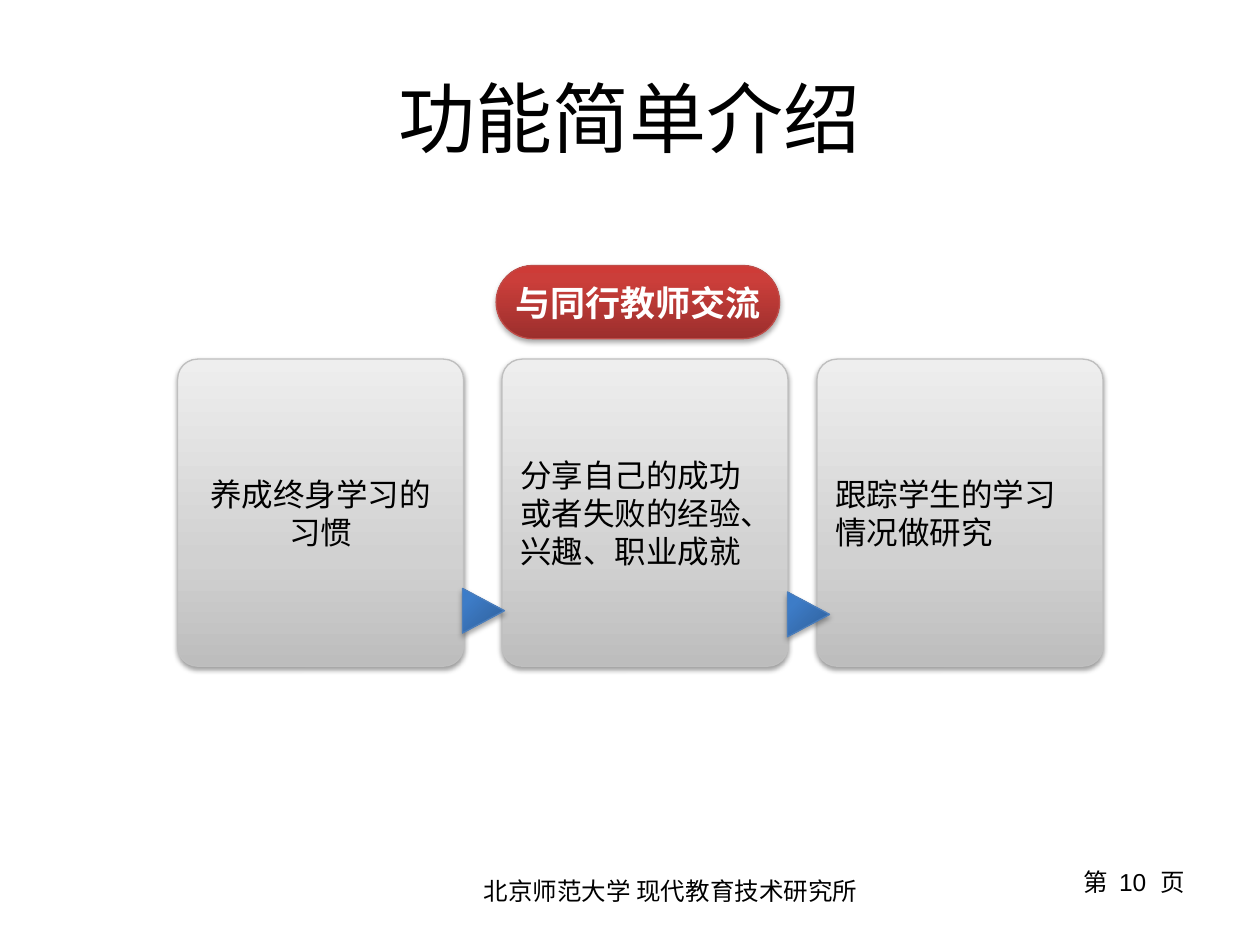
from copy import deepcopy
from lxml import etree
from pptx import Presentation
from pptx.dml.color import RGBColor
from pptx.enum import shapes, text
from pptx.oxml import ns
from pptx.util import Pt

LEFT, MID, RIGHT = text.PP_ALIGN.LEFT, text.PP_ALIGN.CENTER, text.PP_ALIGN.RIGHT
KIND = shapes.MSO_SHAPE


def write(box, words, size, align=LEFT, font="Arial", color="000000", bold=False):
    par = box.text_frame.paragraphs[0]
    par.alignment = align
    run = par.add_run()
    run.text = words
    run.font.size = Pt(size)
    run.font.name = font
    run.font.bold = bold
    run.font.color.rgb = RGBColor.from_string(color)


def solid(kind, x, y, w, h, stops, angle, line, alpha, dist):
    shape = slide.shapes.add_shape(kind, Pt(x), Pt(y), Pt(w), Pt(h))
    shape.fill.gradient()
    shape.fill.gradient_angle = 360 - angle
    props = shape._element.spPr
    grads = props.find(ns.qn("a:gradFill")).find(ns.qn("a:gsLst"))
    grads.append(deepcopy(grads[-1]))
    for stop, (place, color) in zip(shape.fill.gradient_stops, stops):
        stop.position = place
        stop.color.rgb = RGBColor.from_string(color)
    shape.line.color.rgb = RGBColor.from_string(line)
    shape.line.width = Pt(0.75)
    shape.shadow.inherit = False
    shade = etree.SubElement(
        props.find(ns.qn("a:effectLst")), ns.qn("a:outerShdw"),
        blurRad=str(Pt(3.1)), dist=str(Pt(dist)), dir="5400000", rotWithShape="0")
    black = etree.SubElement(shade, ns.qn("a:srgbClr"), val="000000")
    etree.SubElement(black, ns.qn("a:alpha"), val=str(alpha * 1000))
    shape.text_frame.vertical_anchor = text.MSO_ANCHOR.MIDDLE
    return shape


deck = Presentation()
deck.slide_width, deck.slide_height = Pt(720), Pt(540)
slide = deck.slides.add_slide(deck.slide_layouts[5])

title = slide.shapes.title
title.left, title.top, title.width, title.height = Pt(36), Pt(21.6), Pt(648), Pt(90)
title.text_frame.vertical_anchor = text.MSO_ANCHOR.MIDDLE
write(title, "功能简单介绍", 44, MID)

notes = [
    (269.3, 496.8, 317.5, 46, "北京师范大学 现代教育技术研究所", LEFT, "Noto Sans CJK SC"),
    (516.2, 491.8, 167.8, 37.4, "第  10  页", RIGHT, "Arial"),
]
for x, y, w, h, words, align, font in notes:
    note = slide.shapes.add_textbox(Pt(x), Pt(y), Pt(w), Pt(h))
    note.text_frame.word_wrap = True
    write(note, words, 14, align, font)

red = [(0, "9C2F2D"), (0.8, "CB3E3A"), (1, "CE3B37")]
pill = solid(KIND.ROUNDED_RECTANGLE, 283.5, 151.7, 162, 41.8, red, 270, "BF4C48", 35, 1.8)
pill.adjustments[0] = 0.5
pill.text_frame.word_wrap = False
write(pill, "与同行教师交流", 20, MID, "Calibri", "FFFFFF", True)

gray = [(0, "BDBDBD"), (0.35, "D1D1D1"), (1, "EEEEEE")]
cards = [
    (101.5, "养成终身学习的习惯", MID),
    (286.9, "分享自己的成功或者失败的经验、兴趣、职业成就", LEFT),
    (466.9, "跟踪学生的学习情况做研究", LEFT),
]
for x, words, align in cards:
    card = solid(KIND.ROUNDED_RECTANGLE, x, 205.2, 163.4, 175.5, gray, 270, "BFBFBF", 38, 1.6)
    card.adjustments[0] = 0.07
    card.text_frame.word_wrap = True
    write(card, words, 18, align)

blue = [(0, "2F5F99"), (0.8, "3D7CC7"), (1, "3A7CCB")]
for x, y in [(263.5, 337), (449.3, 339.1)]:
    arrow = solid(KIND.FLOWCHART_EXTRACT, x, y, 25.5, 24, blue, 135, "4B7EBC", 35, 1.8)
    arrow.rotation = 90

deck.save("out.pptx")
